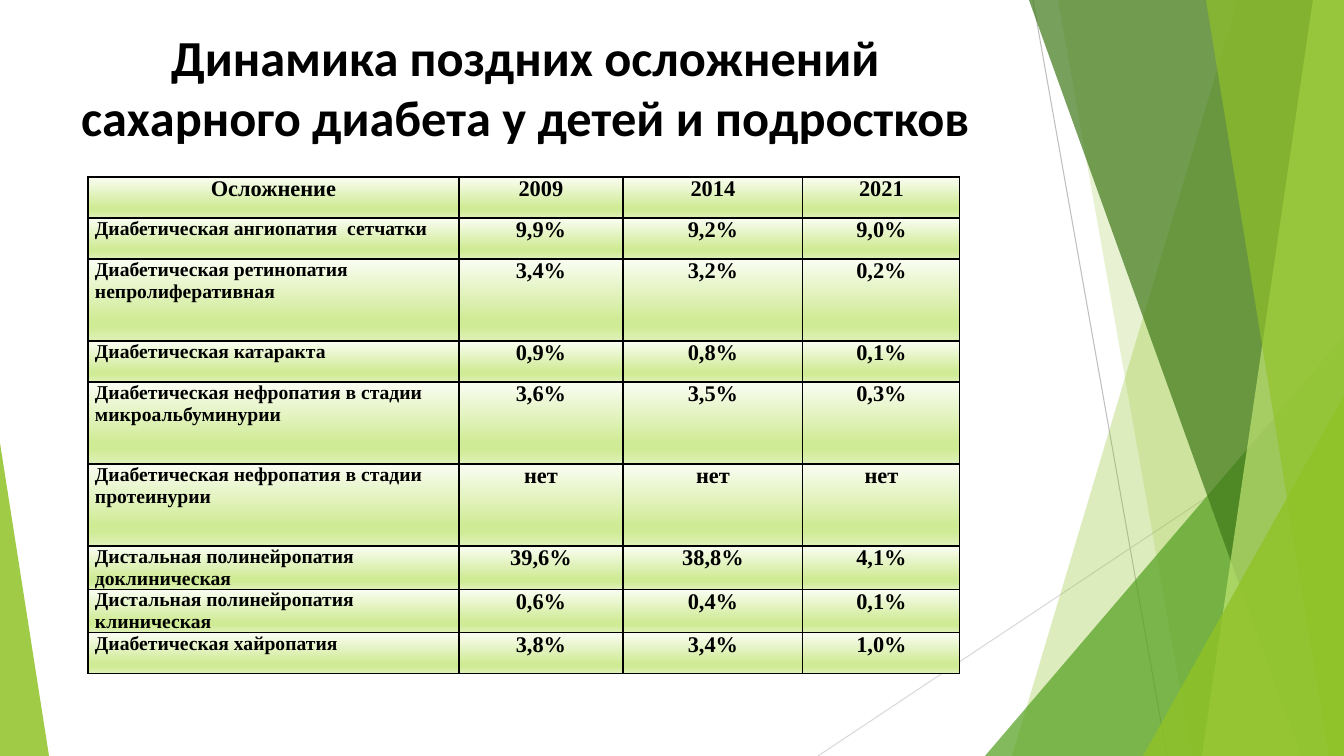
from pptx import Presentation
from pptx.dml.color import RGBColor
from pptx.enum.shapes import MSO_CONNECTOR, MSO_SHAPE
from pptx.enum.text import MSO_ANCHOR, MSO_AUTO_SIZE, PP_ALIGN
from pptx.oxml import parse_xml
from pptx.oxml.ns import nsdecls, qn
from pptx.util import Pt
from lxml import etree

SCALE = 12192000 / 1344
COLORS = {
    "black": "000000", "line": "BFBFBF", "pale line": "D9D9D9",
    "lime": "90C226", "green": "54A021", "dark green": "3F7819", "light lime": "C0E474",
    "cell top": "FAFDF3", "cell middle": "D0EB96", "cell bottom": "DFF1B9",
}


def px(length):
    return round(length * SCALE)


def style_cell(cell):
    """Give the cell black borders and a vertical green gradient."""
    borders = "".join(
        f'<a:{side} w="12700"><a:solidFill><a:srgbClr val="{COLORS["black"]}"/></a:solidFill></a:{side}>'
        for side in ("lnL", "lnR", "lnT", "lnB"))
    stops = "".join(
        f'<a:gs pos="{percent * 1000}"><a:srgbClr val="{COLORS[name]}"/></a:gs>'
        for percent, name in ((0, "cell top"), (74, "cell middle"), (83, "cell middle"), (100, "cell bottom")))
    styled = parse_xml(
        f'<a:tcPr {nsdecls("a")}>{borders}<a:gradFill><a:gsLst>{stops}</a:gsLst>'
        '<a:lin ang="5400000" scaled="0"/></a:gradFill></a:tcPr>')
    properties = cell._tc.get_or_add_tcPr()
    for part in list(styled):
        properties.append(part)


deck = Presentation()
deck.slide_width, deck.slide_height = px(1344), px(756)
page = deck.slides.add_slide(deck.slide_layouts[5])
shapes = page.shapes

# Thin background lines
for x1, y1, x2, y2, color in ((1033, 0, 1167, 756, "line"), (1344, 406, 818, 756, "pale line")):
    line = shapes.add_connector(MSO_CONNECTOR.STRAIGHT, px(x1), px(y1), px(x2), px(y2))
    line.line.color.rgb = RGBColor.from_string(COLORS[color])
    line.line.width = Pt(0.75)
    etree.SubElement(line._element.spPr, qn("a:effectLst"))

# Bands give their left edge as (top x, bottom x);
# triangles give (left, top, width, height, apex)
facets = [
    ((1238, 1012), "lime", 30),
    ((1058, 1192), "lime", 20),
    ((985, 336, 359, 420, 1), "green", 72),
    ((1029, 1301), "dark green", 70),
    ((1313, 1202), "light lime", 70),
    ((1206, 1329), "lime", 65),
    ((1143, 396, 201, 360, 1), "lime", 80),
    ((0, 443, 49, 313, 0), "lime", 85),
]
for geometry, color, opacity in facets:
    if len(geometry) == 2:
        top_x, bottom_x = geometry
        outline = shapes.build_freeform(top_x, 0, scale=SCALE)
        outline.add_line_segments([(1344, 0), (1344, 756), (bottom_x, 756)], close=True)
        facet = outline.convert_to_shape()
    else:
        *frame, apex = geometry
        facet = shapes.add_shape(MSO_SHAPE.ISOSCELES_TRIANGLE, *map(px, frame))
        facet.adjustments[0] = apex
    facet.shadow.inherit = False
    facet.line.fill.background()
    facet.fill.solid()
    facet.fill.fore_color.rgb = RGBColor.from_string(COLORS[color])
    tint = facet._element.spPr.find(qn("a:solidFill"))[0]
    etree.SubElement(tint, qn("a:alpha"), val=str(opacity * 1000))

# Complications table
rows = [
    ("Осложнение", "2009", "2014", "2021"),
    ("Диабетическая ангиопатия  сетчатки", "9,9%", "9,2%", "9,0%"),
    ("Диабетическая ретинопатия непролиферативная", "3,4%", "3,2%", "0,2%"),
    ("Диабетическая катаракта", "0,9%", "0,8%", "0,1%"),
    ("Диабетическая нефропатия в стадии микроальбуминурии", "3,6%", "3,5%", "0,3%"),
    ("Диабетическая нефропатия в стадии протеинурии", "нет", "нет", "нет"),
    ("Дистальная полинейропатия доклиническая", "39,6%", "38,8%", "4,1%"),
    ("Дистальная полинейропатия клиническая", "0,6%", "0,4%", "0,1%"),
    ("Диабетическая хайропатия", "3,8%", "3,4%", "1,0%"),
]
column_widths = [371, 164, 180, 157]
row_heights = [41, 41, 82, 41, 82, 82, 41, 41, 41]
table = shapes.add_table(len(rows), len(column_widths), px(88), px(177),
                         px(sum(column_widths)), px(sum(row_heights))).table
for column, width in zip(table.columns, column_widths):
    column.width = px(width)
for row, height in zip(table.rows, row_heights):
    row.height = px(height)
for row_index, texts in enumerate(rows):
    for column_index, text in enumerate(texts):
        is_label = row_index > 0 and column_index == 0
        cell = table.cell(row_index, column_index)
        cell.text = text
        cell.margin_left = cell.margin_right = px(7)
        cell.margin_top = cell.margin_bottom = 0
        style_cell(cell)
        para = cell.text_frame.paragraphs[0]
        para.alignment = PP_ALIGN.LEFT if is_label else PP_ALIGN.CENTER
        para.font.name = "Times New Roman"
        para.font.size = Pt(14 if is_label else 16)
        para.font.bold = True
        para.font.color.rgb = RGBColor.from_string(COLORS["black"])

# Title
title = shapes.title
title.left, title.top, title.width, title.height = px(69), px(21), px(913), px(163)
frame = title.text_frame
frame.text = "Динамика поздних осложнений сахарного диабета у детей и подростков"
frame.word_wrap = True
frame.auto_size = MSO_AUTO_SIZE.NONE
frame.vertical_anchor = MSO_ANCHOR.TOP
para = frame.paragraphs[0]
para.alignment = PP_ALIGN.CENTER
para.font.name = "Calibri"
para.font.size = Pt(36)
para.font.bold = True
para.font.color.rgb = RGBColor.from_string(COLORS["black"])

deck.save("out.pptx")
